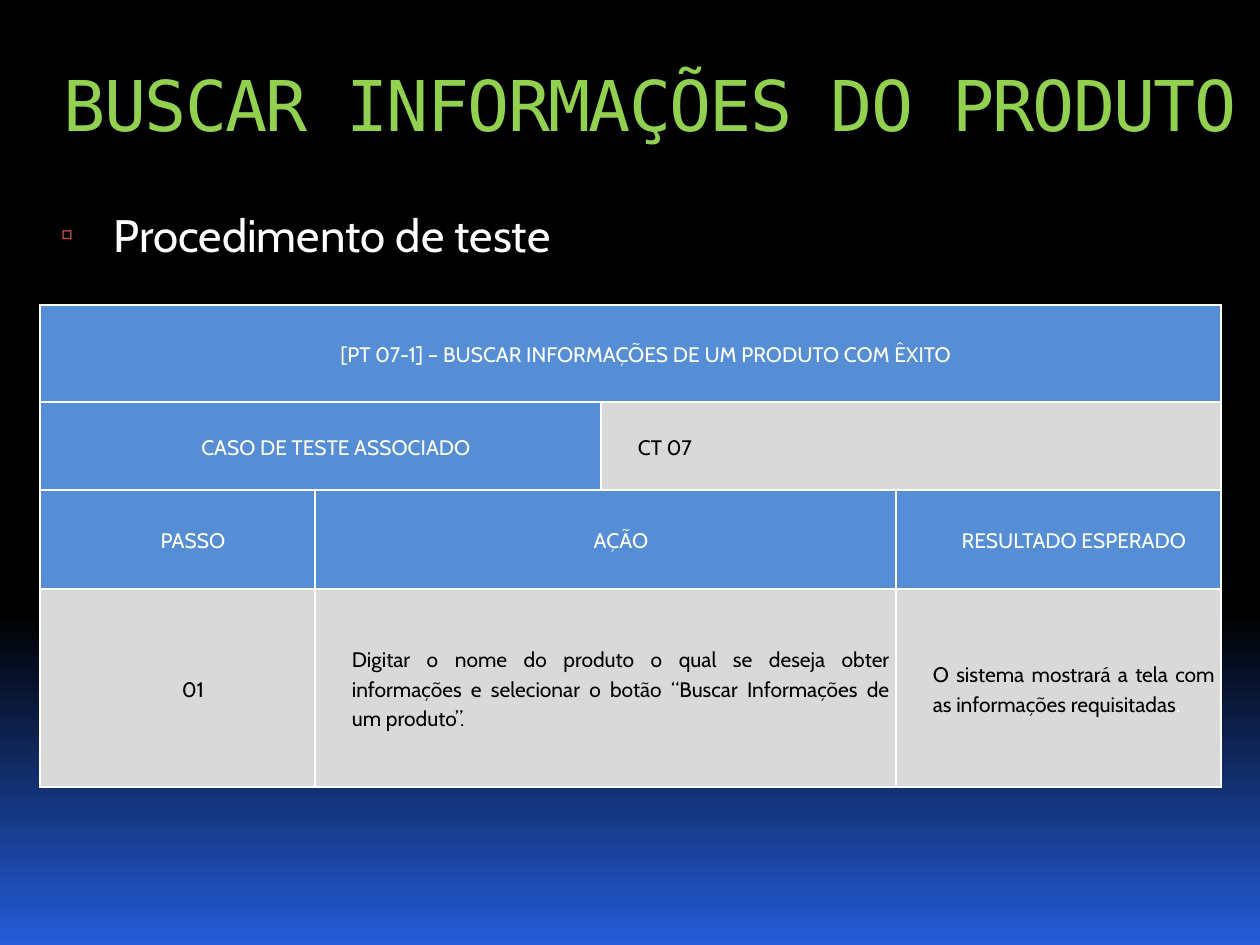
from dataclasses import dataclass

from lxml import etree
from pptx import Presentation
from pptx import util as u
from pptx.dml.color import RGBColor
from pptx.enum import text
from pptx.oxml import parse_xml
from pptx.oxml.ns import nsdecls, qn

MID = text.PP_ALIGN.CENTER
LEFT = text.PP_ALIGN.LEFT
JUST = text.PP_ALIGN.JUSTIFY


@dataclass(frozen=True)
class Theme:
    black: str = "000000"
    white: str = "FFFFFF"
    glow: str = "245CD9"
    green: str = "92D050"
    red: str = "C0504D"
    blue: str = "558ED5"
    grey: str = "D9D9D9"
    mono: str = "DejaVu Sans Mono"
    sans: str = "Cabin"
    head: int = 40
    body: int = 26
    cell: int = 12


T = Theme()
COLS = [275, 286, 295, 325]
ROWS = [97, 88, 99, 198]
CELLS = [
    (0, 0, 4, "[PT 07-1] – BUSCAR INFORMAÇÕES DE UM PRODUTO COM ÊXITO", T.blue, MID),
    (1, 0, 2, "CASO DE TESTE ASSOCIADO", T.blue, MID),
    (1, 2, 2, "CT 07", T.grey, LEFT),
    (2, 0, 1, "PASSO", T.blue, MID),
    (2, 1, 2, "AÇÃO", T.blue, MID),
    (2, 3, 1, "RESULTADO ESPERADO", T.blue, MID),
    (3, 0, 1, "01", T.grey, MID),
    (3, 1, 2, "Digitar o nome do produto o qual se deseja obter informações e "
     "selecionar o botão “Buscar Informações de um produto”.", T.grey, JUST),
    (3, 3, 1, "O sistema mostrará a tela com as informações requisitadas", T.grey, JUST),
]


def px(n):
    return u.Emu(round(n * 914400 / 126))


def rgb(hue):
    return RGBColor.from_string(hue)


def place(shape, left, top, width, height):
    shape.left, shape.top = px(left), px(top)
    shape.width, shape.height = px(width), px(height)


def style(font, face, size, hue):
    font.name, font.size, font.bold = face, u.Pt(size), False
    font.color.rgb = rgb(hue)


def indent(para, left, first):
    props = para._p.get_or_add_pPr()
    props.set("marL", str(px(left)))
    props.set("indent", str(px(first)))
    return props


def backdrop(slide):
    fill = slide.background.fill
    fill.gradient()
    fill.gradient_angle = 270
    stops = zip(fill.gradient_stops, (0.65, 1), (T.black, T.glow))
    for stop, spot, hue in stops:
        stop.position = spot
        stop.color.rgb = rgb(hue)


def holder(shape, box, top, words):
    place(shape, *box)
    frame = shape.text_frame
    frame.auto_size = text.MSO_AUTO_SIZE.NONE
    frame.word_wrap = True
    frame.vertical_anchor = text.MSO_ANCHOR.TOP
    frame.margin_top = px(top)
    para = frame.paragraphs[0]
    para.text = words
    return para


def title(slide):
    para = holder(slide.shapes.title, (0, 49, 1260, 158), 12,
                  " BUSCAR INFORMAÇÕES DO PRODUTO")
    para.alignment = MID
    style(para.font, T.mono, T.head, T.green)
    para.runs[0]._r.get_or_add_rPr().set("spc", "-100")


def topic(slide):
    para = holder(slide.placeholders[1], (43, 207, 1168, 675), 0,
                  "Procedimento de teste")
    para.space_before = u.Pt(5.2)
    props = indent(para, 58, -53)
    tint = etree.SubElement(props, qn("a:buClr"))
    etree.SubElement(tint, qn("a:srgbClr"), val=T.red)
    etree.SubElement(props, qn("a:buSzPct"), val="80000")
    etree.SubElement(props, qn("a:buChar"), char="▫")
    style(para.font, T.sans, T.body, T.white)


def border(cell):
    props = cell._tc.get_or_add_tcPr()
    for spot, side in enumerate(("lnL", "lnR", "lnT", "lnB")):
        props.insert(spot, parse_xml(
            f'<a:{side} {nsdecls("a")} w="12700"><a:solidFill>'
            f'<a:srgbClr val="{T.white}"/></a:solidFill></a:{side}>'))


def write(cell, words, fill, align):
    cell.vertical_anchor = text.MSO_ANCHOR.MIDDLE
    para = cell.text_frame.paragraphs[0]
    para.text = words
    para.alignment = align
    para.line_spacing = 1.15
    para.space_before = para.space_after = u.Pt(2)
    indent(para, 31, 0)
    ink = T.white if fill == T.blue else T.black
    style(para.font, T.sans, T.cell, ink)
    return para


def grid(slide):
    frame = slide.shapes.add_table(len(ROWS), len(COLS), px(40), px(305),
                                   px(sum(COLS)), px(sum(ROWS)))
    table = frame.table
    table.first_row = table.horz_banding = False
    for col, width in zip(table.columns, COLS):
        col.width = px(width)
    for row, height in zip(table.rows, ROWS):
        row.height = px(height)
    for row, col, span, words, fill, align in CELLS:
        last = table.cell(row, col + span - 1)
        if span > 1:
            table.cell(row, col).merge(last)
        for spot in range(col, col + span):
            cell = table.cell(row, spot)
            cell.margin_left = cell.margin_right = px(6)
            cell.margin_top = cell.margin_bottom = 0
            cell.fill.solid()
            cell.fill.fore_color.rgb = rgb(fill)
            border(cell)
        para = write(table.cell(row, col), words, fill, align)
    dot = para.add_run()
    dot.text = "."
    dot.font.color.rgb = rgb(T.white)


def main():
    deck = Presentation()
    deck.slide_width, deck.slide_height = px(1260), px(945)
    slide = deck.slides.add_slide(deck.slide_layouts[1])
    backdrop(slide)
    title(slide)
    topic(slide)
    grid(slide)
    deck.save("out.pptx")


if __name__ == "__main__":
    main()
